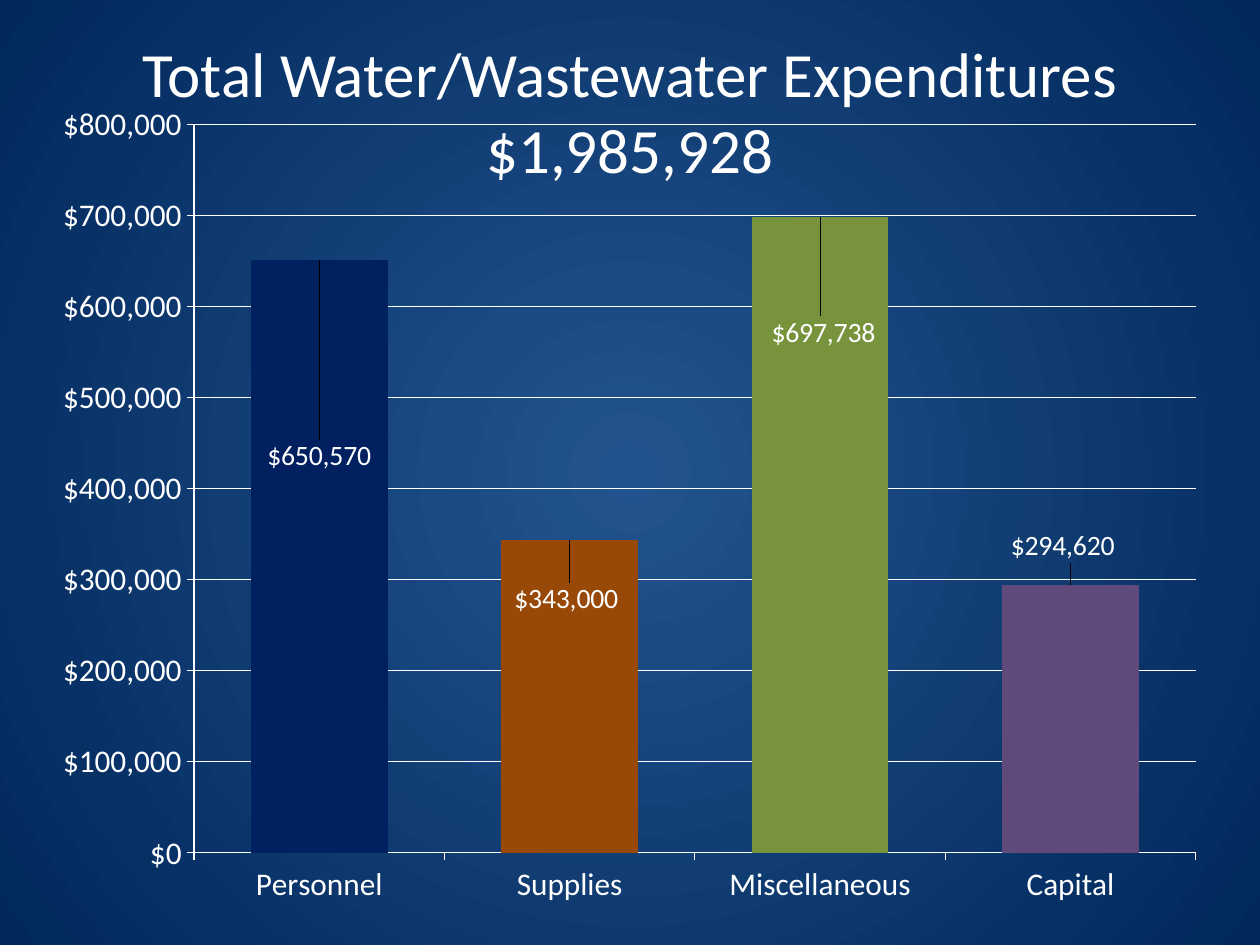
from lxml import etree
from pptx import Presentation
from pptx import util as u
from pptx.chart.data import CategoryChartData
from pptx.dml.color import RGBColor
from pptx.enum import chart as charts, text
from pptx.oxml import parse_xml
from pptx.oxml.ns import nsdecls, qn

MONEY = '"$"#,##0'
EXPENDITURES = [
    ("Personnel", 650570, "002060", (0, 0.27)),
    ("Supplies", 343000, "984807", (-0.003, 0.1)),
    ("Miscellaneous", 697738, "77933C", (0.003, 0.17)),
    ("Capital", 294620, "604A7B", (-0.007, -0.02)),
]


def color(value):
    return RGBColor.from_string(value)


def assign(target, **values):
    for name, value in values.items():
        setattr(target, name, value)


def manual_layout(**values):
    layout = parse_xml(f"<c:layout {nsdecls('c')}><c:manualLayout/></c:layout>")
    for name, value in values.items():
        etree.SubElement(layout[0], qn(f"c:{name}")).set("val", str(value))
    return layout


class Slide:
    """Holds the style and the current slide, and adds each kind of element."""

    font = "Calibri"
    ink = "FFFFFF"

    def __init__(self, deck):
        self.page = deck.slides.add_slide(deck.slide_layouts[5])

    def style(self, font, size):
        assign(font, name=self.font, size=u.Pt(size), bold=False)
        font.color.rgb = color(self.ink)

    def background(self, center, edge):
        fill = self.page.background.fill
        fill.gradient()
        for stop, value in zip(fill.gradient_stops, (center, edge)):
            stop.color.rgb = color(value)
        gradient = self.page.background._cSld.find(".//" + qn("a:gradFill"))
        linear = gradient.find(qn("a:lin"))
        gradient.replace(linear, parse_xml(
            f'<a:path {nsdecls("a")} path="circle"><a:fillToRect '
            'l="50000" t="50000" r="50000" b="50000"/></a:path>'))

    def title(self, words, left, top, width, height):
        box = self.page.shapes.title
        assign(box, left=u.Inches(left), top=u.Inches(top),
               width=u.Inches(width), height=u.Inches(height))
        assign(box.text_frame, text=words, word_wrap=True,
               vertical_anchor=text.MSO_ANCHOR.MIDDLE)
        para = box.text_frame.paragraphs[0]
        para.alignment = text.PP_ALIGN.CENTER
        self.style(para.runs[0].font, 36)

    def line(self, line):
        line.color.rgb = color(self.ink)
        line.width = u.Pt(0.75)

    def axis(self, axis):
        axis.major_tick_mark = charts.XL_TICK_MARK.OUTSIDE
        self.style(axis.tick_labels.font, 18)
        self.line(axis.format.line)

    def column_chart(self, rows, left, top, width, height):
        data = CategoryChartData(number_format=MONEY)
        data.categories = [row[0] for row in rows]
        data.add_series("Series 1", [row[1] for row in rows])
        chart = self.page.shapes.add_chart(
            charts.XL_CHART_TYPE.COLUMN_CLUSTERED, u.Inches(left),
            u.Inches(top), u.Inches(width), u.Inches(height), data).chart
        assign(chart, has_legend=False, has_title=False)
        self.style(chart.font, 18)
        self.axis(chart.category_axis)
        self.axis(chart.value_axis)
        assign(chart.value_axis, minimum_scale=0, maximum_scale=800000,
               major_unit=100000, has_major_gridlines=True)
        assign(chart.value_axis.tick_labels, number_format=MONEY,
               number_format_is_linked=False)
        self.line(chart.value_axis.major_gridlines.format.line)

        plot = chart.plots[0]
        assign(plot, gap_width=83, vary_by_categories=False)
        series = plot.series[0]
        series.format.fill.solid()
        series.format.fill.fore_color.rgb = color("77933C")
        labels = series.data_labels
        assign(labels, show_value=True, number_format=MONEY,
               number_format_is_linked=False)
        self.style(labels.font, 16)
        for index, (_, _, fill, shift) in enumerate(rows):
            self.column(series.points[index], fill, shift)

        area = chart._chartSpace.chart.plotArea
        for layout in area.findall(qn("c:layout")):
            area.remove(layout)
        area.insert(0, manual_layout(
            layoutTarget="inner", xMode="edge", yMode="edge",
            x=0.108, y=0.037, w=0.891, h=0.901))

    def column(self, point, fill, shift):
        point.format.fill.solid()
        point.format.fill.fore_color.rgb = color(fill)
        label = point.data_label
        self.style(label.font, 16)
        label.position = charts.XL_LABEL_POSITION.OUTSIDE_END
        label._dLbl.insert(1, manual_layout(x=shift[0], y=shift[1]))


def main():
    deck = Presentation()
    assign(deck, slide_width=u.Inches(10), slide_height=u.Inches(7.5))
    slide = Slide(deck)
    slide.background("23538E", "00285B")
    slide.title("Total Water/Wastewater Expenditures $1,985,928",
                0.5, 0.25, 9, 1.25)
    slide.column_chart(EXPENDITURES, 0.5, 0.75, 9, 6.42)
    deck.save("out.pptx")


if __name__ == "__main__":
    main()
